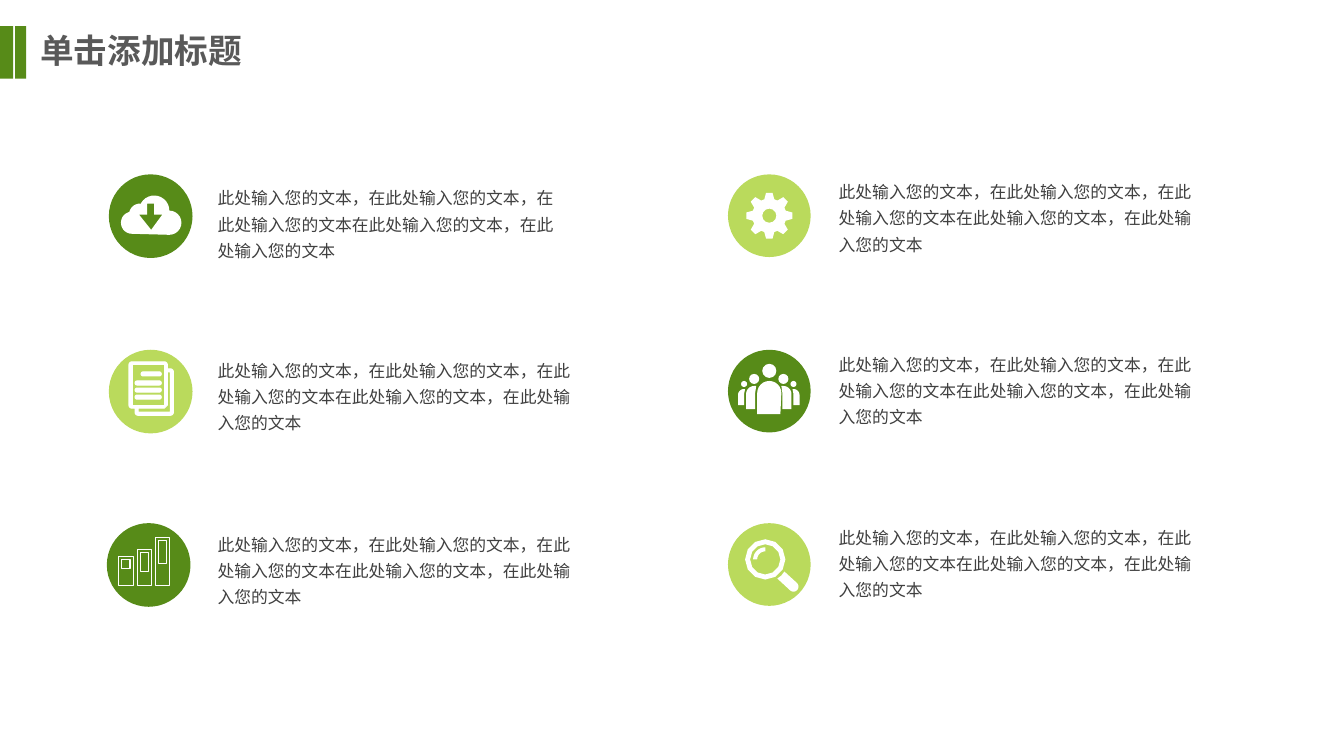
"""Build a title slide with six icon and text pairs in two columns."""
from dataclasses import dataclass
from math import cos, radians, sin

from lxml import etree
from pptx import Presentation
from pptx import util as u
from pptx.dml.color import RGBColor
from pptx.enum import shapes, text
from pptx.oxml.ns import qn


@dataclass
class Theme:
    dark: str = "578B18"
    lime: str = "BADA5C"
    white: str = "FFFFFF"
    head: str = "595959"
    body: str = "404040"
    font: str = "Noto Sans CJK SC"
    big: int = 24
    small: int = 12


def paint(shape, fill, line=None):
    shape.shadow.inherit = False
    shape.fill.solid()
    shape.fill.fore_color.rgb = RGBColor.from_string(fill)
    if line:
        shape.line.color.rgb = RGBColor.from_string(line)
        shape.line.width = u.Pt(0.75)
    else:
        shape.line.fill.background()


def arc(x, y, r, start, end, steps=12):
    turns = [radians(start + (end - start) * i / steps) for i in range(steps + 1)]
    return [(x + r * cos(t), y + r * sin(t)) for t in turns]


theme = Theme()
deck = Presentation()
deck.slide_width, deck.slide_height = u.Inches(13.33), u.Inches(7.5)
slide = deck.slides.add_slide(deck.slide_layouts[5])
items = slide.shapes

rect, oval = shapes.MSO_SHAPE.RECTANGLE, shapes.MSO_SHAPE.OVAL
bases = [
    (rect, 0, 0.26, 0.13, 0.52, theme.dark),
    (rect, 0.15, 0.26, 0.11, 0.52, theme.dark),
]
discs = [
    (1.08, 1.73, 0.83, theme.dark),
    (1.08, 3.47, 0.83, theme.lime),
    (1.06, 5.19, 0.83, theme.dark),
    (7.22, 1.73, 0.82, theme.lime),
    (7.22, 3.47, 0.82, theme.dark),
    (7.22, 5.19, 0.82, theme.lime),
]
bases += [(oval, x, y, size, size, fill) for x, y, size, fill in discs]
for kind, x, y, wide, high, fill in bases:
    base = items.add_shape(kind, *map(u.Inches, (x, y, wide, high)))
    paint(base, fill)

cloud = [
    arc(1.31, 2.21, 0.11, 90, 250) + arc(1.39, 2.13, 0.11, 195, 275)
    + arc(1.53, 2.09, 0.15, 210, 360) + arc(1.68, 2.21, 0.12, 270, 450),
    [(1.5, 2.28), (1.38, 2.13), (1.46, 2.13), (1.46, 2.02),
     (1.53, 2.02), (1.53, 2.13), (1.61, 2.13)],
]

teeth = []
for turn in range(0, 360, 45):
    teeth += arc(7.63, 2.14, 0.23, turn - 8, turn + 8, 1)
    teeth += arc(7.63, 2.14, 0.17, turn + 17, turn + 28, 1)
gear = [teeth, arc(7.63, 2.14, 0.07, 0, 360)]

pages = [
    arc(1.31, 3.62, 0.03, 180, 270) + arc(1.63, 3.62, 0.03, 270, 360)
    + [(1.66, 3.66)] + arc(1.69, 3.69, 0.03, 270, 360)
    + arc(1.69, 4.09, 0.03, 0, 90) + arc(1.37, 4.09, 0.03, 90, 180)
    + [(1.34, 4.05)] + arc(1.31, 4.02, 0.03, 90, 180),
    [(1.31, 3.62), (1.63, 3.62), (1.63, 4.02), (1.31, 4.02)],
    [(1.69, 3.69), (1.69, 4.09), (1.37, 4.09), (1.37, 4.05),
     (1.63, 4.05), (1.66, 4.02), (1.66, 3.69)],
]

half = [
    arc(7.77, 3.76, 0.05, 0, 360),
    arc(7.87, 3.81, 0.03, 0, 360),
    arc(7.77, 3.91, 0.08, 270, 360)
    + [(7.85, 4.06), (7.76, 4.06), (7.76, 3.9), (7.75, 3.83)],
    arc(7.87, 3.92, 0.06, 270, 360)
    + [(7.93, 4.02), (7.87, 4.02), (7.87, 3.91), (7.86, 3.86)],
]
crowd = half + [[(15.25 - x, y) for x, y in part] for part in half]
crowd += [
    arc(7.63, 3.68, 0.07, 0, 360),
    [(7.51, 4.11)] + arc(7.63, 3.9, 0.12, 180, 360) + [(7.74, 4.11)],
]

lens = [arc(7.59, 5.55, 0.2, 0, 360), arc(7.59, 5.55, 0.15, 0, 360)]
grip = [[(7.71, 5.74), (7.75, 5.71), (7.78, 5.67)]
        + arc(7.87, 5.82, 0.05, -45, 135)]
glint = [arc(7.59, 5.55, 0.12, 180, 270) + arc(7.59, 5.55, 0.08, 270, 180)]

icons = [(icon, theme.white, None)
         for icon in (cloud, gear, crowd, lens, grip, glint)]
icons.append((pages, theme.white, theme.white))
for left, y in ((1.42, 3.71), (1.36, 3.8), (1.36, 3.87), (1.36, 3.94)):
    row = arc(left, y, 0.02, 90, 270) + arc(1.58, y, 0.02, -90, 90)
    icons.append(([row], theme.white, theme.white))
for left, top, low in ((1.18, 5.52, 5.64), (1.36, 5.45, 5.67), (1.54, 5.33, 5.59)):
    edges = ((left, top, left + 0.14, 5.81),
             (left + 0.03, top + 0.03, left + 0.11, low))
    bar = [[(a, b), (c, b), (c, d), (a, d)] for a, b, c, d in edges]
    icons.append((bar, theme.dark, theme.white))

for parts, fill, line in icons:
    paths = [[(u.Inches(x), u.Inches(y)) for x, y in part] for part in parts]
    pen = items.build_freeform(*paths[0][0])
    pen.add_line_segments(paths[0][1:])
    for path in paths[1:]:
        pen.move_to(*path[0])
        pen.add_line_segments(path[1:])
    paint(pen.convert_to_shape(), fill, line)

title = items.title
title.left, title.top, title.width, title.height = map(
    u.Inches, (0.3, 0.25, 3.3, 0.53))
title.text_frame.vertical_anchor = text.MSO_ANCHOR.TOP
title.text_frame.auto_size = text.MSO_AUTO_SIZE.SHAPE_TO_FIT_TEXT
words = [(title, "单击添加标题", theme.big, theme.head, True, 1.0)]

note = "此处输入您的文本，在此处输入您的文本，在此处输入您的文本在此处输入您的文本，在此处输入您的文本"
spots = [
    (2.06, 1.74, 3.69), (2.06, 3.45, 3.85), (2.06, 5.18, 3.8),
    (8.22, 1.68, 3.86), (8.22, 3.39, 3.86), (8.22, 5.11, 3.86),
]
for x, y, wide in spots:
    box = items.add_textbox(*map(u.Inches, (x, y, wide, 0.91)))
    box.text_frame.vertical_anchor = text.MSO_ANCHOR.MIDDLE
    words.append((box, note, theme.small, theme.body, False, 1.3))

for box, line, size, tint, bold, gap in words:
    box.text_frame.word_wrap = True
    para = box.text_frame.paragraphs[0]
    para.alignment = text.PP_ALIGN.LEFT
    para.line_spacing = gap
    run = para.add_run()
    run.text = line
    font = run.font
    font.name, font.size, font.bold = theme.font, u.Pt(size), bold
    font.color.rgb = RGBColor.from_string(tint)
    east = etree.SubElement(run._r.get_or_add_rPr(), qn("a:ea"))
    east.set("typeface", theme.font)

deck.save("out.pptx")
